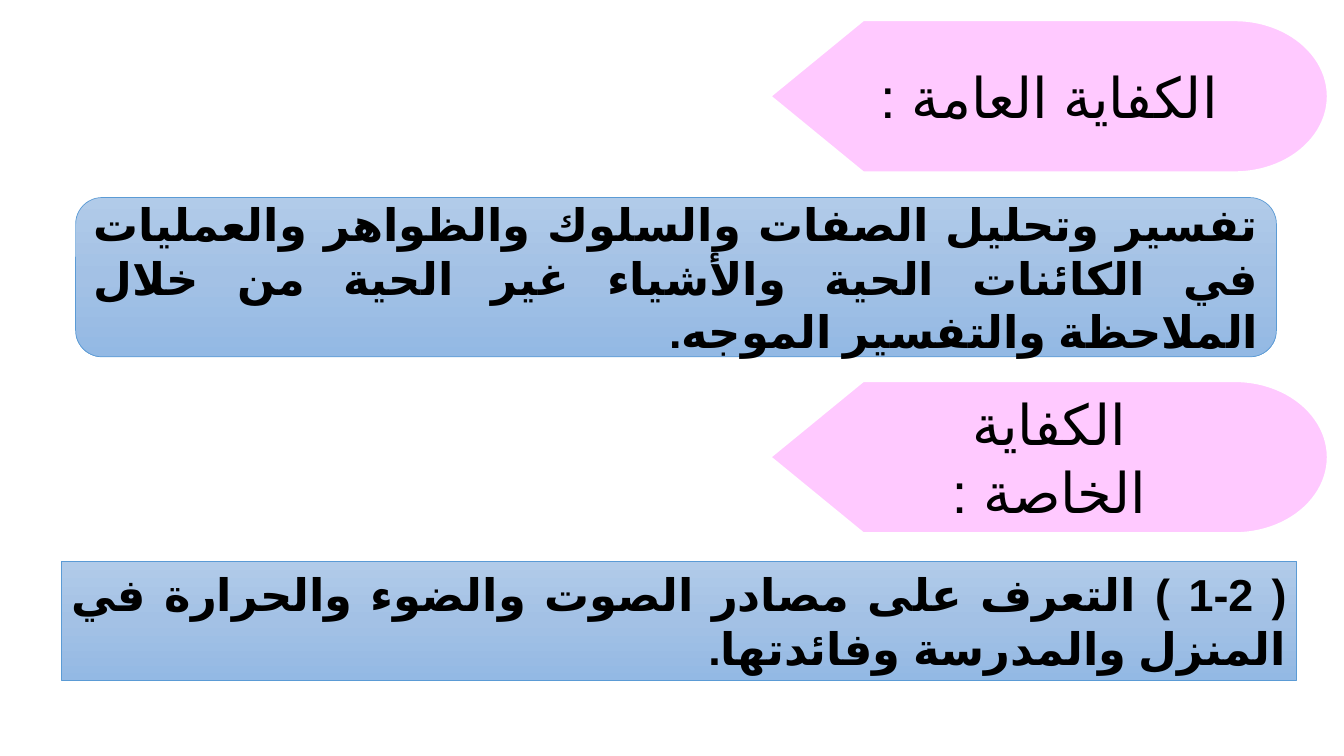
import copy

import pptx
import pptx.dml.color
import pptx.enum.shapes
import pptx.enum.text
import pptx.oxml.ns
import pptx.util
from pptx.util import Inches

SHAPE = pptx.enum.shapes.MSO_SHAPE
ALIGN = pptx.enum.text.PP_ALIGN
ANCHOR = pptx.enum.text.MSO_ANCHOR
FIT = pptx.enum.text.MSO_AUTO_SIZE


def rgb(color):
    """Return the colour for a hex string."""
    return pptx.dml.color.RGBColor.from_string(color)


def add_shape(s, kind, box, line, width):
    """Add a preset shape with an outline and no shadow."""
    sp = s.shapes.add_shape(kind, *(Inches(v) for v in box))
    sp.shadow.inherit = False
    sp.line.color.rgb = rgb(line)
    sp.line.width = pptx.util.Pt(width)
    return sp


def write(sp, text, size, align, bold=False, anchor=ANCHOR.MIDDLE, fit=FIT.NONE):
    """Write one right-to-left Arabic paragraph into a shape."""
    tf = sp.text_frame
    tf.word_wrap = True
    tf.auto_size = fit
    tf.vertical_anchor = anchor
    p = tf.paragraphs[0]
    p.alignment = align
    p._p.get_or_add_pPr().set("rtl", "1")
    r = p.add_run()
    r.text = text
    r.font.name = "Calibri"
    r.font.size = pptx.util.Pt(size)
    r.font.bold = bold
    r.font.color.rgb = rgb("000000")
    cs = pptx.oxml.parse_xml(f'<a:cs {pptx.oxml.ns.nsdecls("a")} typeface="Arial"/>')
    r.font._element.append(cs)
    r.font._element.set("lang", "ar-KW")


def fill_gradient(sp, colors):
    """Fill a shape from top to bottom with evenly spaced colours."""
    sp.fill.gradient()
    sp.fill.gradient_angle = 270
    stops = sp._element.spPr.find(".//" + pptx.oxml.ns.qn("a:gsLst"))
    while len(stops) < len(colors):
        stops.append(copy.deepcopy(stops[-1]))
    for i, (stop, color) in enumerate(zip(sp.fill.gradient_stops, colors)):
        stop.position = i / (len(colors) - 1)
        stop.color.rgb = rgb(color)


def add_heading(s, top, text):
    """Add a pink heading tag at the right of the slide."""
    sp = add_shape(s, SHAPE.FLOWCHART_DISPLAY, (7.64, top, 5.53, 1.51), "FFFFFF", 1.5)
    sp.fill.solid()
    sp.fill.fore_color.rgb = rgb("FFC9FF")
    write(sp, text, 40, ALIGN.CENTER)


def add_statement(s, kind, box, text, **kwargs):
    """Add a blue panel with a justified bold statement."""
    sp = add_shape(s, kind, box, "5B9BD5", 0.5)
    fill_gradient(sp, ("B1CBE9", "A3C1E5", "93B9E4"))
    write(sp, text, 32, ALIGN.JUSTIFY, bold=True, **kwargs)


def main():
    """Build the slide of general and specific competencies."""
    prs = pptx.Presentation()
    prs.slide_width, prs.slide_height = Inches(13.33), Inches(7.5)
    s = prs.slides.add_slide(prs.slide_layouts[6])
    add_heading(s, 0.2, "الكفاية العامة :")
    add_statement(
        s, SHAPE.RECTANGLE, (0.61, 5.57, 12.25, 1.18),
        "( 1-2 ) التعرف على مصادر الصوت والضوء والحرارة في المنزل والمدرسة وفائدتها.",
        anchor=ANCHOR.TOP, fit=FIT.SHAPE_TO_FIT_TEXT)
    add_heading(s, 3.78, "الكفاية الخاصة :")
    add_statement(
        s, SHAPE.ROUNDED_RECTANGLE, (0.75, 1.96, 11.91, 1.58),
        "تفسير وتحليل الصفات والسلوك والظواهر والعمليات في الكائنات الحية "
        "والأشياء غير الحية من خلال الملاحظة والتفسير الموجه.")
    prs.save("out.pptx")


if __name__ == "__main__":
    main()
